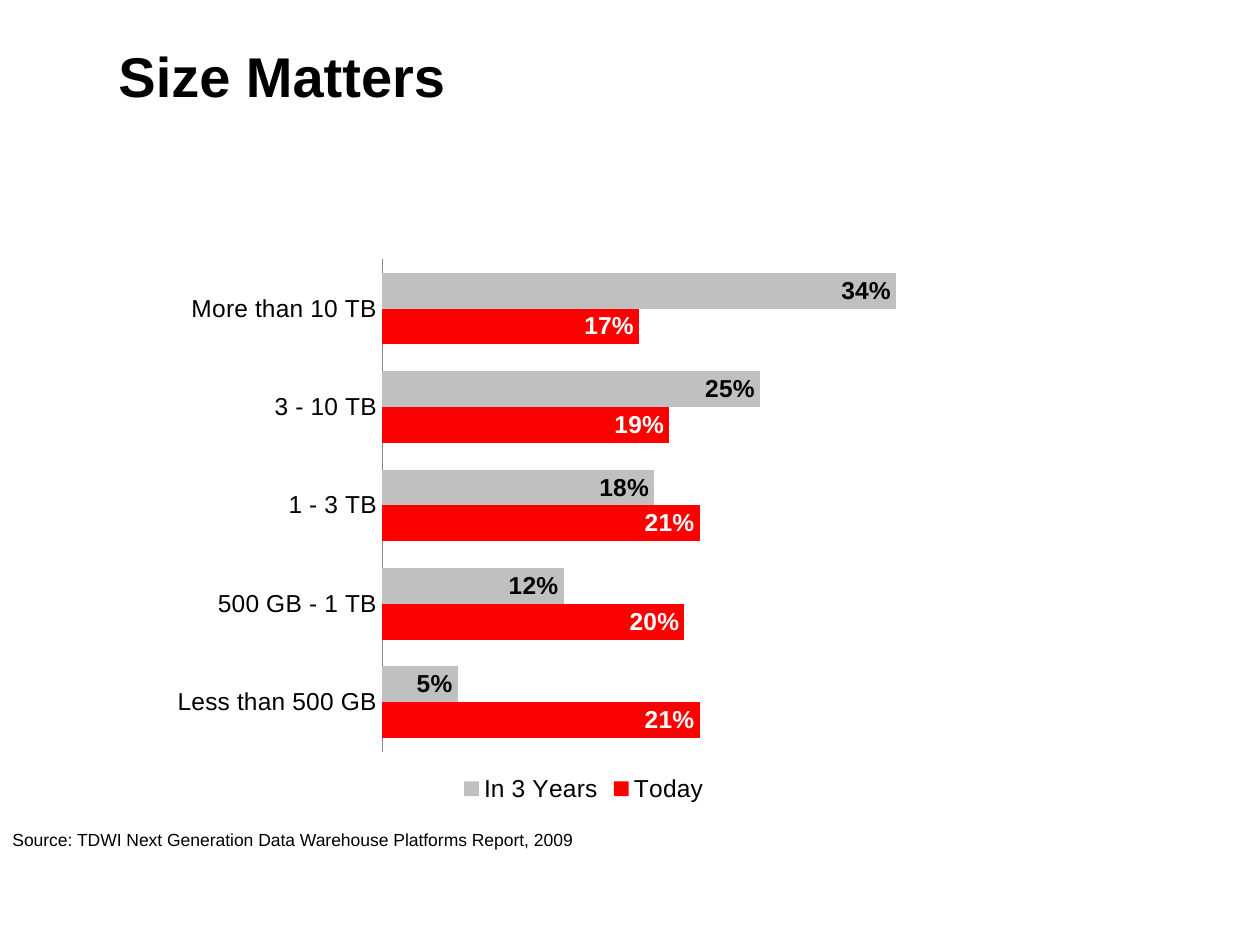
import pptx
import pptx.chart.data
import pptx.dml.color
import pptx.enum.chart
import pptx.enum.text
import pptx.util
from dataclasses import dataclass
from lxml import etree

Pt = pptx.util.Pt
Color = pptx.dml.color.RGBColor.from_string


@dataclass(frozen=True)
class Theme:
    font: str = "Arial"
    ink: str = "000000"
    white: str = "FFFFFF"
    today: str = "FD0000"
    future: str = "C0C0C0"
    axis: str = "868686"
    title_size: int = 32
    chart_size: int = 14
    source_size: int = 10


theme = Theme()


def style_font(font, size, color=theme.ink, bold=False):
    font.name = theme.font
    font.size = Pt(size)
    font.bold = bold
    font.color.rgb = Color(color)


def write_text(box, text, size, bold=False, line_spacing=1.0):
    frame = box.text_frame
    frame.word_wrap = True
    frame.auto_size = pptx.enum.text.MSO_AUTO_SIZE.NONE
    frame.vertical_anchor = pptx.enum.text.MSO_ANCHOR.TOP
    para = frame.paragraphs[0]
    para.alignment = pptx.enum.text.PP_ALIGN.LEFT
    para.line_spacing = line_spacing
    para.space_before = Pt(0)
    span = para.add_run()
    span.text = text
    style_font(span.font, size, bold=bold)


deck = pptx.Presentation()
deck.slide_width, deck.slide_height = Pt(720), Pt(540)
page = deck.slides.add_slide(deck.slide_layouts[5])

# Title
title = page.shapes.title
title.left, title.top, title.width, title.height = Pt(60.5), Pt(20), Pt(624), Pt(74)
write_text(title, "Size Matters", size=theme.title_size, bold=True)

# Warehouse size chart
data = pptx.chart.data.CategoryChartData(number_format="0%")
data.categories = ["Less than 500 GB", "500 GB - 1 TB", "1 - 3 TB", "3 - 10 TB", "More than 10 TB"]
data.add_series("Today", [0.21, 0.20, 0.21, 0.19, 0.17])
data.add_series("In 3 Years", [0.05, 0.12, 0.18, 0.25, 0.34])
chart = page.shapes.add_chart(
    pptx.enum.chart.XL_CHART_TYPE.BAR_CLUSTERED,
    Pt(93.6), Pt(141.8), Pt(480), Pt(319.7), data,
).chart
style_font(chart.font, theme.chart_size)
chart.has_title = False
chart.has_legend = True
chart.legend.position = pptx.enum.chart.XL_LEGEND_POSITION.BOTTOM
chart.legend.include_in_layout = False
style_font(chart.legend.font, theme.chart_size)

sizes = chart.category_axis
sizes.major_tick_mark = pptx.enum.chart.XL_TICK_MARK.NONE
sizes.format.line.color.rgb = Color(theme.axis)
sizes.format.line.width = Pt(0.75)
style_font(sizes.tick_labels.font, theme.chart_size)

shares = chart.value_axis
shares.minimum_scale, shares.maximum_scale = 0, 0.4
shares.has_major_gridlines = False
shares.visible = False

plot = chart.plots[0]
plot.gap_width = 75
plot.overlap = 0
plot.vary_by_categories = False
series_colors = [(theme.today, theme.white), (theme.future, theme.ink)]
for series, (fill, label_color) in zip(plot.series, series_colors):
    series.format.fill.solid()
    series.format.fill.fore_color.rgb = Color(fill)
    labels = series.data_labels
    labels.show_value = True
    labels.number_format = "0%"
    labels.number_format_is_linked = False
    labels.position = pptx.enum.chart.XL_LABEL_POSITION.INSIDE_END
    style_font(labels.font, theme.chart_size, label_color, bold=True)

# Fixed inner plot area, as fractions of the chart
namespace = "http://schemas.openxmlformats.org/drawingml/2006/chart"
plot_area = chart._chartSpace.chart.plotArea
for old_layout in plot_area.findall(f"{{{namespace}}}layout"):
    plot_area.remove(old_layout)
layout = etree.Element(f"{{{namespace}}}layout")
manual = etree.SubElement(layout, f"{{{namespace}}}manualLayout")
for tag, value in [("layoutTarget", "inner"), ("xMode", "edge"), ("yMode", "edge"),
                   ("x", "0.26"), ("y", "0.02"), ("w", "0.72"), ("h", "0.88")]:
    etree.SubElement(manual, f"{{{namespace}}}{tag}", val=value)
plot_area.insert(0, layout)

# Source line
source = page.shapes.add_textbox(Pt(0), Pt(471.6), Pt(562.3), Pt(18))
write_text(source, "Source: TDWI Next Generation Data Warehouse Platforms Report, 2009",
           size=theme.source_size, line_spacing=0.9)

deck.save("out.pptx")
